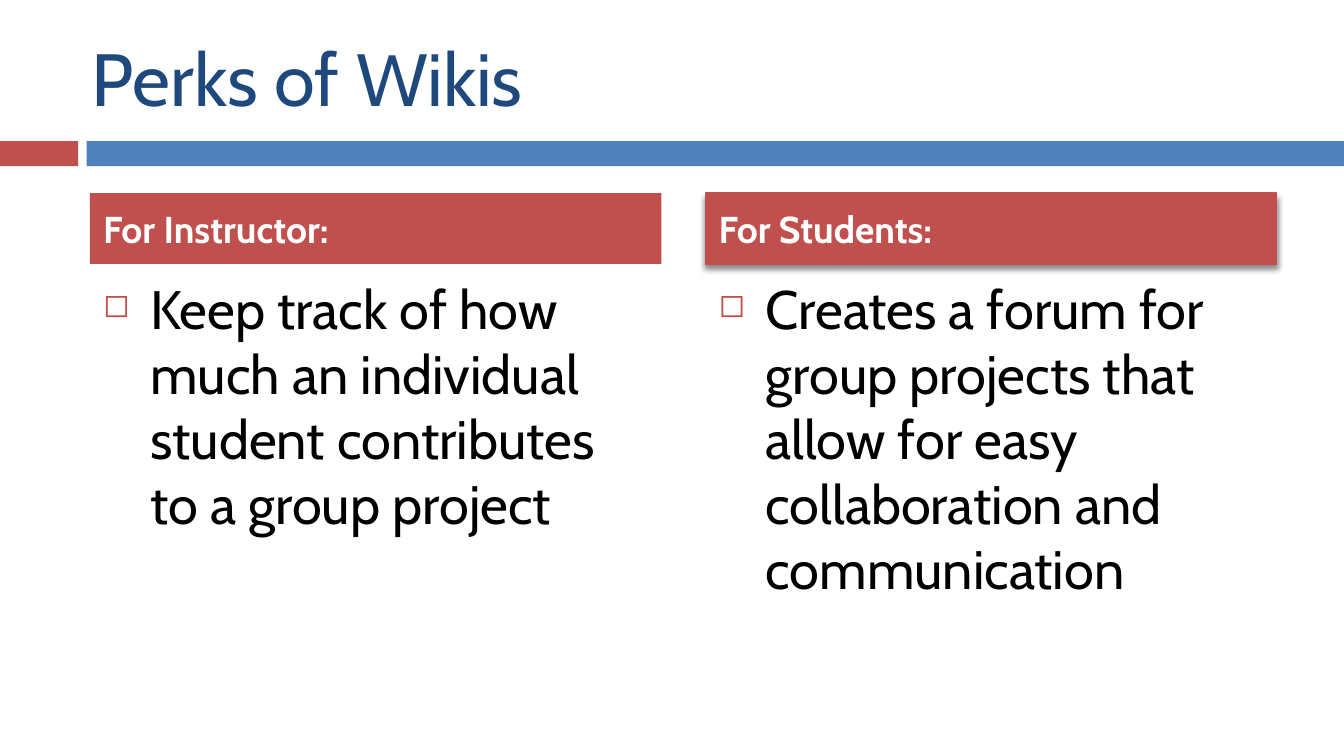
from lxml.etree import SubElement
from pptx import Presentation
from pptx.dml.color import RGBColor
from pptx.enum.shapes import MSO_SHAPE as Preset
from pptx.enum.text import MSO_ANCHOR as Anchor, PP_ALIGN as Align
from pptx.oxml.ns import qn
from pptx.util import Cm, Pt

FONT = "Cabin"
RED, BLUE, NAVY, WHITE, BLACK = "C0504D", "4F81BD", "1F497D", "FFFFFF", "000000"
COLUMN_WIDTH = 10.8
COLUMNS = [
    (1.7, "For Instructor:",
     "Keep track of how much an individual student contributes to a group project"),
    (13.33, "For Students:",
     "Creates a forum for group projects that allow for easy collaboration and communication"),
]


def color(value):
    return RGBColor.from_string(value)


def add_bar(slide, left, top, width, height, fill):
    bar = slide.shapes.add_shape(Preset.RECTANGLE, Cm(left), Cm(top), Cm(width), Cm(height))
    bar.shadow.inherit = False
    bar.fill.solid()
    bar.fill.fore_color.rgb = color(fill)
    bar.line.fill.background()
    return bar


def write_text(shape, text, size, ink, anchor, bold=False, space_before=0):
    frame = shape.text_frame
    frame.word_wrap = True
    frame.vertical_anchor = anchor
    para = frame.paragraphs[0]
    para.text = text
    para.alignment = Align.LEFT
    para.space_before = Pt(space_before)
    para.font.name = FONT
    para.font.size = Pt(size)
    para.font.bold = bold
    para.font.color.rgb = color(ink)
    return para


def add_text(slide, left, top, width, height, *args, **options):
    box = slide.shapes.add_textbox(Cm(left), Cm(top), Cm(width), Cm(height))
    return write_text(box, *args, **options)


def add_bullet(para, symbol, ink, percent, indent):
    properties = para._p.get_or_add_pPr()
    properties.set("marL", str(Cm(indent)))
    properties.set("indent", str(-Cm(indent)))
    bullet_color = SubElement(properties, qn("a:buClr"))
    SubElement(bullet_color, qn("a:srgbClr"), val=ink)
    SubElement(properties, qn("a:buSzPct"), val=str(percent * 1000))
    SubElement(properties, qn("a:buChar"), char=symbol)
    default_run = properties.find(qn("a:defRPr"))
    if default_run is not None:
        properties.append(default_run)


def add_shadow(shape, ink, opacity, blur, distance, angle):
    effects = shape._element.spPr.find(qn("a:effectLst"))
    shadow = SubElement(effects, qn("a:outerShdw"), blurRad=str(Pt(blur)),
                        dist=str(Pt(distance)), dir=str(angle * 60000), rotWithShape="0")
    shadow_color = SubElement(shadow, qn("a:srgbClr"), val=ink)
    SubElement(shadow_color, qn("a:alpha"), val=str(opacity * 1000))


def add_column(slide, left, heading, body):
    para = add_text(slide, left, 5.08, COLUMN_WIDTH, 7.47, body, 29, BLACK, Anchor.TOP,
                    space_before=7)
    add_bullet(para, "◻", RED, 60, 0.89)
    header = add_bar(slide, left, 3.65, COLUMN_WIDTH, 1.34, RED)
    write_text(header, heading, 20, WHITE, Anchor.MIDDLE, bold=True, space_before=7)
    return header


def main():
    deck = Presentation()
    deck.slide_width, deck.slide_height = Cm(25.4), Cm(14.29)
    slide = deck.slides.add_slide(deck.slide_layouts[6])

    add_bar(slide, 0, 2.67, 1.48, 0.47, RED)
    add_bar(slide, 1.64, 2.67, 23.76, 0.47, BLUE)
    add_text(slide, 1.48, 0.56, 22.66, 1.8, "Perks of Wikis", 39.6, NAVY, Anchor.MIDDLE)

    headers = [add_column(slide, *column) for column in COLUMNS]
    students = headers[-1]
    students.line.color.rgb = color(RED)
    students.line.width = Pt(0.79)
    add_shadow(students, BLACK, 45, 3, 2.4, 90)

    deck.save("out.pptx")


if __name__ == "__main__":
    main()
